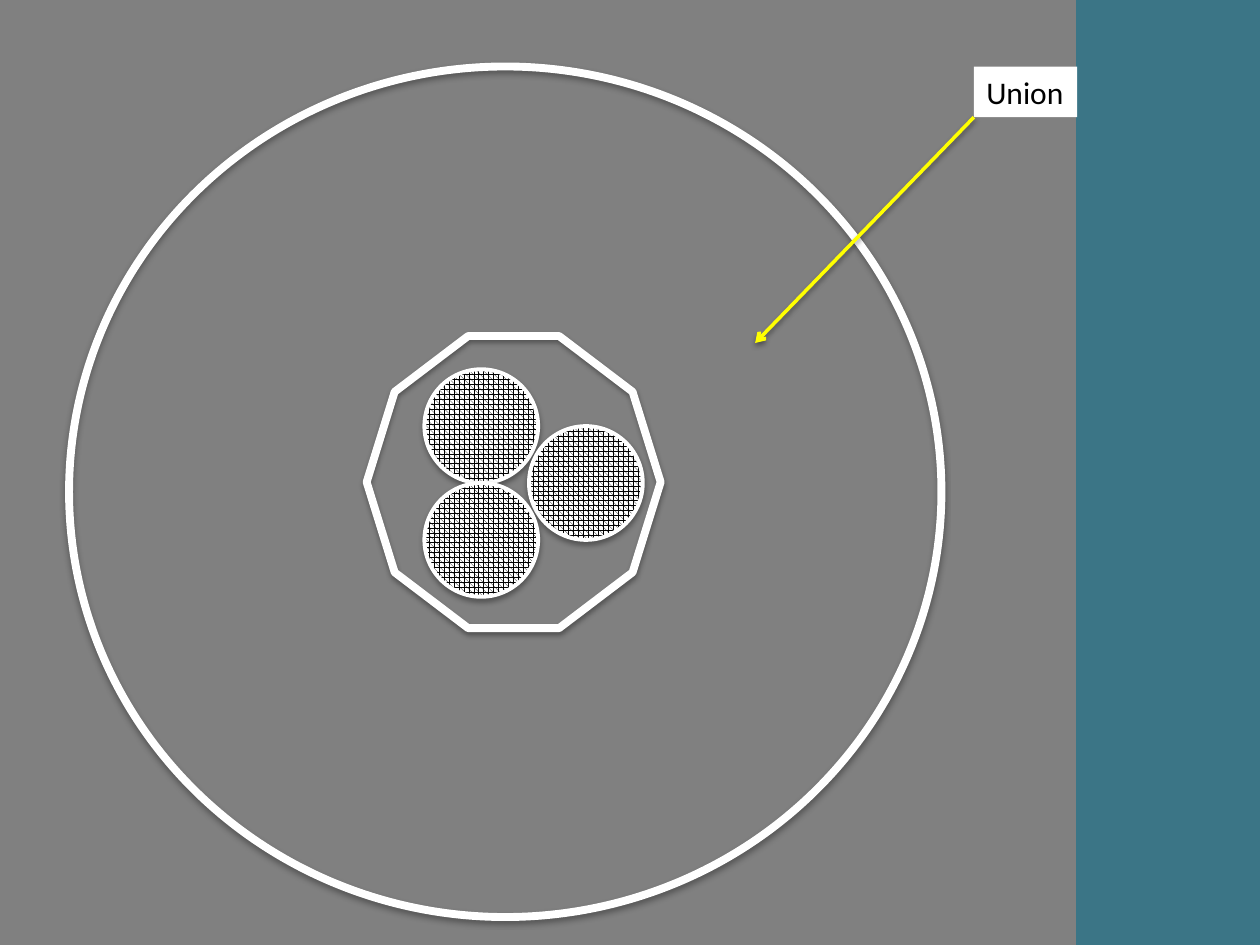
from lxml import etree
from pptx import Presentation
from pptx.dml.color import RGBColor
from pptx.enum.dml import MSO_PATTERN
from pptx.enum.shapes import MSO_CONNECTOR, MSO_SHAPE
from pptx.enum.text import MSO_AUTO_SIZE
from pptx.oxml.ns import qn
from pptx.util import Pt

RECT = MSO_SHAPE.RECTANGLE
OVAL = MSO_SHAPE.OVAL
DECAGON = MSO_SHAPE.DECAGON
LINE = MSO_CONNECTOR.STRAIGHT
SPHERE = MSO_PATTERN.SPHERE
GROW = MSO_AUTO_SIZE.SHAPE_TO_FIT_TEXT

COLORS = {"back": "808080", "band": "307487", "white": "FFFFFF",
          "black": "000000", "arrow": "FFFF00"}


def color(name):
    return RGBColor.from_string(COLORS[name])


def add(parent, tag, **attrs):
    return etree.SubElement(parent, qn(tag), attrs)


class Board:
    font = "Calibri"
    size = 18

    def __init__(self, slide):
        self.slide = slide
        fill = slide.background.fill
        fill.solid()
        fill.fore_color.rgb = color("back")

    def shade(self, shape, alpha, dist):
        props = shape._element.spPr
        effects = props.find(qn("a:effectLst"))
        if effects is None:
            effects = add(props, "a:effectLst")
        shadow = add(effects, "a:outerShdw", blurRad=str(Pt(3.1)),
                     dist=str(Pt(dist)), dir="5400000", rotWithShape="0")
        tone = add(shadow, "a:srgbClr", val=COLORS["black"])
        add(tone, "a:alpha", val=str(alpha * 1000))

    def band(self, x, y, w, h, alpha):
        shape = self.slide.shapes.add_shape(RECT, Pt(x), Pt(y), Pt(w), Pt(h))
        shape.shadow.inherit = False
        shape.fill.solid()
        shape.fill.fore_color.rgb = color("band")
        shape.line.fill.background()
        tone = shape._element.spPr.find(qn("a:solidFill"))[0]
        add(tone, "a:alpha", val=str(alpha * 1000))

    def ring(self, kind, x, y, w, h, width, mesh=False):
        shape = self.slide.shapes.add_shape(kind, Pt(x), Pt(y), Pt(w), Pt(h))
        shape.shadow.inherit = False
        if mesh:
            shape.fill.patterned()
            shape.fill.pattern = SPHERE
            shape.fill.fore_color.rgb = color("black")
            shape.fill.back_color.rgb = color("white")
        else:
            shape.fill.background()
        shape.line.color.rgb = color("white")
        shape.line.width = Pt(width)
        self.shade(shape, 35, 1.8)

    def label(self, text, x, y, w, h):
        box = self.slide.shapes.add_textbox(Pt(x), Pt(y), Pt(w), Pt(h))
        box.fill.solid()
        box.fill.fore_color.rgb = color("white")
        frame = box.text_frame
        frame.text = text
        frame.word_wrap = False
        frame.auto_size = GROW
        font = frame.paragraphs[0].runs[0].font
        font.name = self.font
        font.size = Pt(self.size)
        font.color.rgb = color("black")

    def arrow(self, x1, y1, x2, y2):
        line = self.slide.shapes.add_connector(
            LINE, Pt(x1), Pt(y1), Pt(x2), Pt(y2))
        line.line.color.rgb = color("arrow")
        line.line.width = Pt(2)
        add(line.line._get_or_add_ln(), "a:tailEnd", type="arrow")
        self.shade(line, 38, 1.6)


def main():
    deck = Presentation()
    deck.slide_width, deck.slide_height = Pt(720), Pt(540)
    board = Board(deck.slides.add_slide(deck.slide_layouts[6]))

    board.band(615, 0, 105, 552, 86)
    board.ring(OVAL, 39.5, 38, 498.5, 486, 4.5)
    side = 65
    left, top = 242.5, 211
    for col, row in ((0, 0), (0.92, 0.5), (0, 1)):
        board.ring(OVAL, left + col * side, top + row * side,
                   side, side, 2.25, mesh=True)
    board.ring(DECAGON, 209.5, 192, 168, 167, 4.5)
    board.label("Union", 556.5, 38, 59, 29)
    board.arrow(556.5, 67, 431.5, 196)

    deck.save("out.pptx")


if __name__ == "__main__":
    main()
